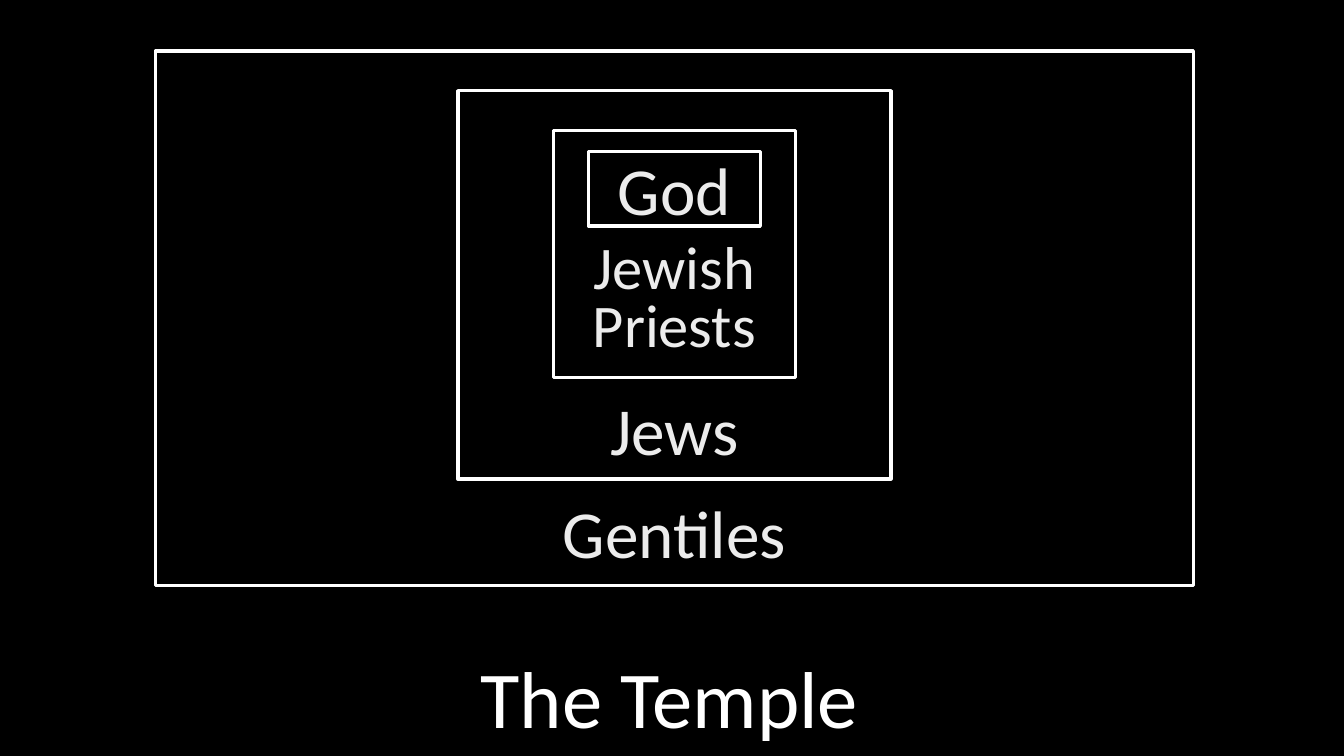
from pptx import Presentation
from pptx.dml.color import RGBColor
from pptx.enum import shapes, text
from pptx.util import Inches, Pt


def color(value):
    return RGBColor.from_string(value)


def write(frame, wording, size, ink, anchor, spacing=1.0):
    frame.word_wrap = True
    frame.vertical_anchor = anchor
    frame.text = wording
    paragraph = frame.paragraphs[0]
    paragraph.alignment = text.PP_ALIGN.CENTER
    paragraph.line_spacing = spacing
    font = paragraph.runs[0].font
    font.name = "Calibri"
    font.size = Pt(size)
    font.color.rgb = color(ink)


WHITE, PALE = "FFFFFF", "ECECEC"
TOP, MIDDLE = text.MSO_ANCHOR.TOP, text.MSO_ANCHOR.MIDDLE

deck = Presentation()
deck.slide_width = Inches(11.11)
deck.slide_height = Inches(6.25)
slide = deck.slides.add_slide(deck.slide_layouts[6])
slide.background.fill.solid()
slide.background.fill.fore_color.rgb = color("000000")

temple_center = 5.575
courts = [
    (0.42, 8.58, 4.42),
    (0.75, 3.58, 3.21),
    (1.08, 2.0, 2.04),
    (1.25, 1.42, 0.62),
]
for top, width, height in courts:
    court = slide.shapes.add_shape(
        shapes.MSO_SHAPE.RECTANGLE,
        Inches(temple_center - width / 2), Inches(top), Inches(width), Inches(height))
    court.shadow.inherit = False
    court.fill.background()
    court.line.color.rgb = color(WHITE)
    court.line.width = Pt(2)
holy_of_holies = court
write(holy_of_holies.text_frame, "God", 40, PALE, MIDDLE)

labels = [
    ("Jewish Priests", 4.7, 1.96, 1.75, 1.08, 36, PALE, TOP, 0.8),
    ("Jews", 4.74, 3.16, 1.67, 0.77, 40, PALE, TOP, 1.0),
    ("Gentiles", 4.16, 4.01, 2.83, 0.77, 40, PALE, TOP, 1.0),
    ("The Temple", 0.07, 5.38, 10.93, 0.76, 48, WHITE, MIDDLE, 1.0),
]
for wording, left, top, width, height, size, ink, anchor, spacing in labels:
    label = slide.shapes.add_textbox(Inches(left), Inches(top), Inches(width), Inches(height))
    write(label.text_frame, wording, size, ink, anchor, spacing)

deck.save("out.pptx")
